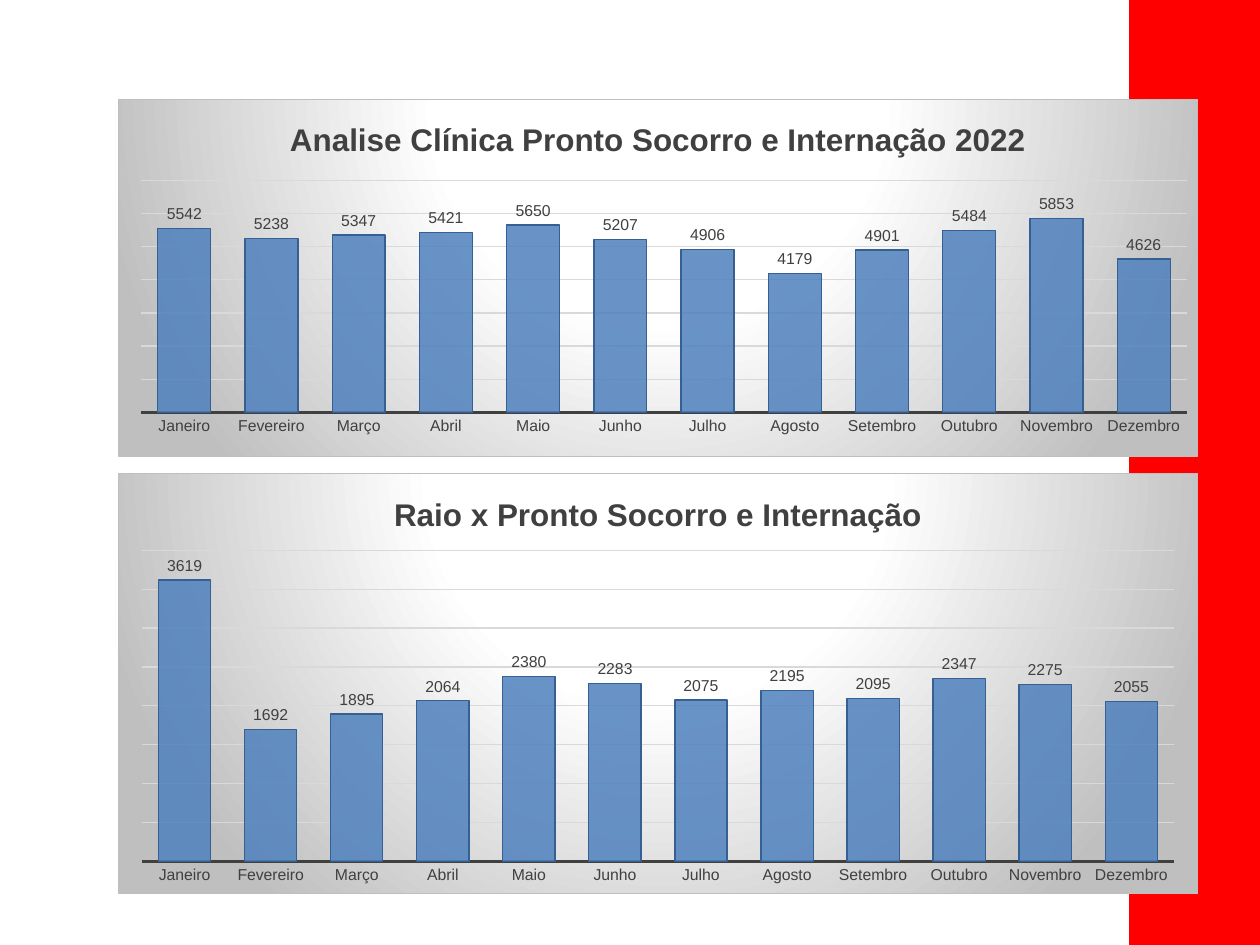
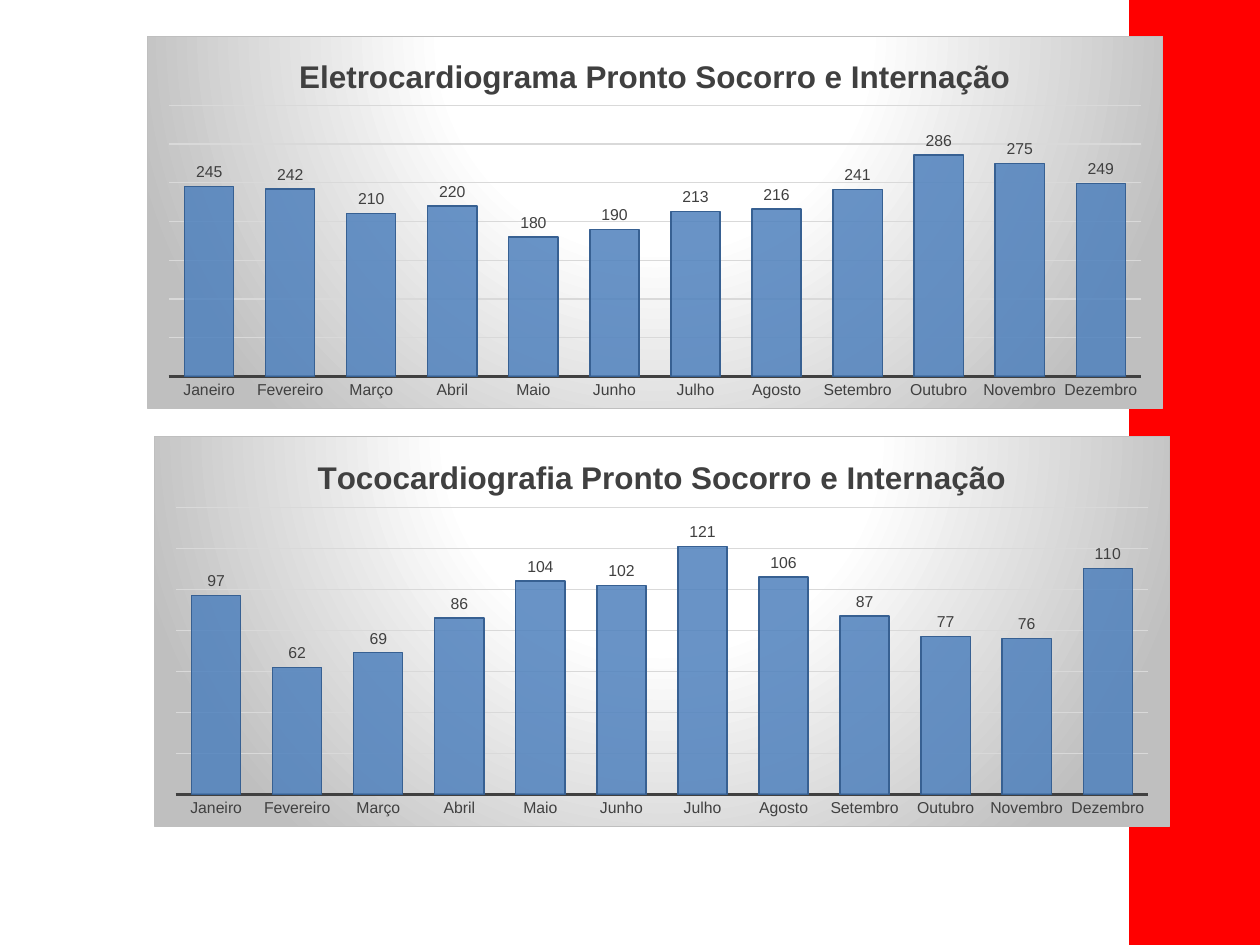
from lxml import etree
from pptx import Presentation
from pptx import util as u
from pptx.chart.data import CategoryChartData
from pptx.dml.color import RGBColor
from pptx.enum import chart as ch, shapes
from pptx.oxml import parse_xml
from pptx.oxml.ns import nsdecls, qn

W, H = 1260, 945
COLORS = {"band": "FF0000", "bar": "4F81BD", "bar_line": "376092",
          "text": "404040", "grid": "D9D9D9", "light": "FFFFFF", "edge": "BFBFBF"}
MONTHS = ["Janeiro", "Fevereiro", "Março", "Abril", "Maio", "Junho", "Julho",
          "Agosto", "Setembro", "Outubro", "Novembro", "Dezembro"]

# One list per slide: title, frame and plot (left, top, width, height), axis step and top, values
SLIDES = [
    [("Analise Clínica Pronto Socorro e Internação 2022",
      (118, 99, 1080, 358), (22, 81, 1048, 233), 1000, 7000,
      [5542, 5238, 5347, 5421, 5650, 5207, 4906, 4179, 4901, 5484, 5853, 4626]),
     ("Raio x Pronto Socorro e Internação",
      (118, 473, 1080, 421), (23, 77, 1034, 312), 500, 4000,
      [3619, 1692, 1895, 2064, 2380, 2283, 2075, 2195, 2095, 2347, 2275, 2055])],
    [("Eletrocardiograma Pronto Socorro e Internação",
      (147, 36, 1016, 373), (21, 69, 974, 272), 50, 350,
      [245, 242, 210, 220, 180, 190, 213, 216, 241, 286, 275, 249]),
     ("Tococardiografia Pronto Socorro e Internação",
      (154, 436, 1016, 391), (21, 71, 974, 288), 20, 140,
      [97, 62, 69, 86, 104, 102, 121, 106, 87, 77, 76, 110])],
]

# Radial gradient and border behind every chart
STOPS = "".join(f'<a:gs pos="{pos}"><a:srgbClr val="{COLORS[name]}"/></a:gs>'
                for pos, name in ((0, "light"), (39000, "light"), (100000, "edge")))
CHART_BACK = f"""<c:spPr {nsdecls("c", "a")}>
  <a:gradFill><a:gsLst>{STOPS}</a:gsLst><a:path path="circle">
    <a:fillToRect l="50000" t="-80000" r="50000" b="180000"/></a:path></a:gradFill>
  <a:ln w="9525"><a:solidFill><a:srgbClr val="{COLORS["edge"]}"/></a:solidFill></a:ln>
</c:spPr>"""


def px(n):
    return u.Emu(round(n * 914400 / 126))


def style(target, color, **fmt):
    """Set a font's or a line's values and its colour."""
    for name, value in fmt.items():
        setattr(target, name, value)
    target.color.rgb = RGBColor.from_string(COLORS[color])


prs = Presentation()
prs.slide_width, prs.slide_height = px(W), px(H)

for charts in SLIDES:
    s = prs.slides.add_slide(prs.slide_layouts[6])

    # Red band on the right
    sp = s.shapes.add_shape(shapes.MSO_SHAPE.RECTANGLE, px(1131), 0, px(W - 1131), px(H))
    sp.shadow.inherit = False
    sp.fill.solid()
    sp.fill.fore_color.rgb = RGBColor.from_string(COLORS["band"])
    style(sp.line, "band", width=u.Pt(2))

    for title, frame, plot_box, step, top, values in charts:
        data = CategoryChartData()
        data.categories = MONTHS
        data.add_series("Series 1", values)
        chart = s.shapes.add_chart(ch.XL_CHART_TYPE.COLUMN_CLUSTERED,
                                   *map(px, frame), data).chart
        chart.has_legend = False
        chart.font.name, chart.font.size = "Arial", u.Pt(10)
        chart._chartSpace.find(qn("c:chart")).addnext(parse_xml(CHART_BACK))

        # Title
        tf = chart.chart_title.text_frame
        tf.text = title
        style(tf.paragraphs[0].runs[0].font, "text", name="Arial", size=u.Pt(18), bold=True)
        chart.chart_title.include_in_layout = False

        # Axes
        cat, val = chart.category_axis, chart.value_axis
        cat.major_tick_mark = ch.XL_TICK_MARK.NONE
        style(cat.tick_labels.font, "text", name="Arial", size=u.Pt(9))
        style(cat.format.line, "text", width=u.Pt(1.5))
        val.minimum_scale, val.maximum_scale, val.major_unit = 0, top, step
        val.has_major_gridlines = True
        style(val.major_gridlines.format.line, "grid", width=u.Pt(0.75))
        val.visible = False

        # Columns, slightly transparent, with their values above
        plot = chart.plots[0]
        plot.gap_width, plot.vary_by_categories = 65, False
        ser = plot.series[0]
        ser.format.fill.solid()
        ser.format.fill.fore_color.rgb = RGBColor.from_string(COLORS["bar"])
        rgb = ser.format.fill._xPr.find(".//" + qn("a:srgbClr"))
        etree.SubElement(rgb, qn("a:alpha"), val="85000")
        style(ser.format.line, "bar_line", width=u.Pt(0.75))
        labels = ser.data_labels
        labels.show_value = True
        labels.position = ch.XL_LABEL_POSITION.OUTSIDE_END
        style(labels.font, "text", name="Arial", size=u.Pt(9))

        # Plot area as shares of the chart frame
        area = chart._chartSpace.find(".//" + qn("c:plotArea"))
        for old in area.findall(qn("c:layout")):
            area.remove(old)
        shares = "".join(f'<c:{tag} val="{part / whole:.4f}"/>'
                         for tag, part, whole in zip("xywh", plot_box, frame[2:] * 2))
        area.insert(0, parse_xml(
            f'<c:layout {nsdecls("c")}><c:manualLayout><c:layoutTarget val="inner"/>'
            f'<c:xMode val="edge"/><c:yMode val="edge"/>{shares}</c:manualLayout></c:layout>'))

prs.save("out.pptx")
